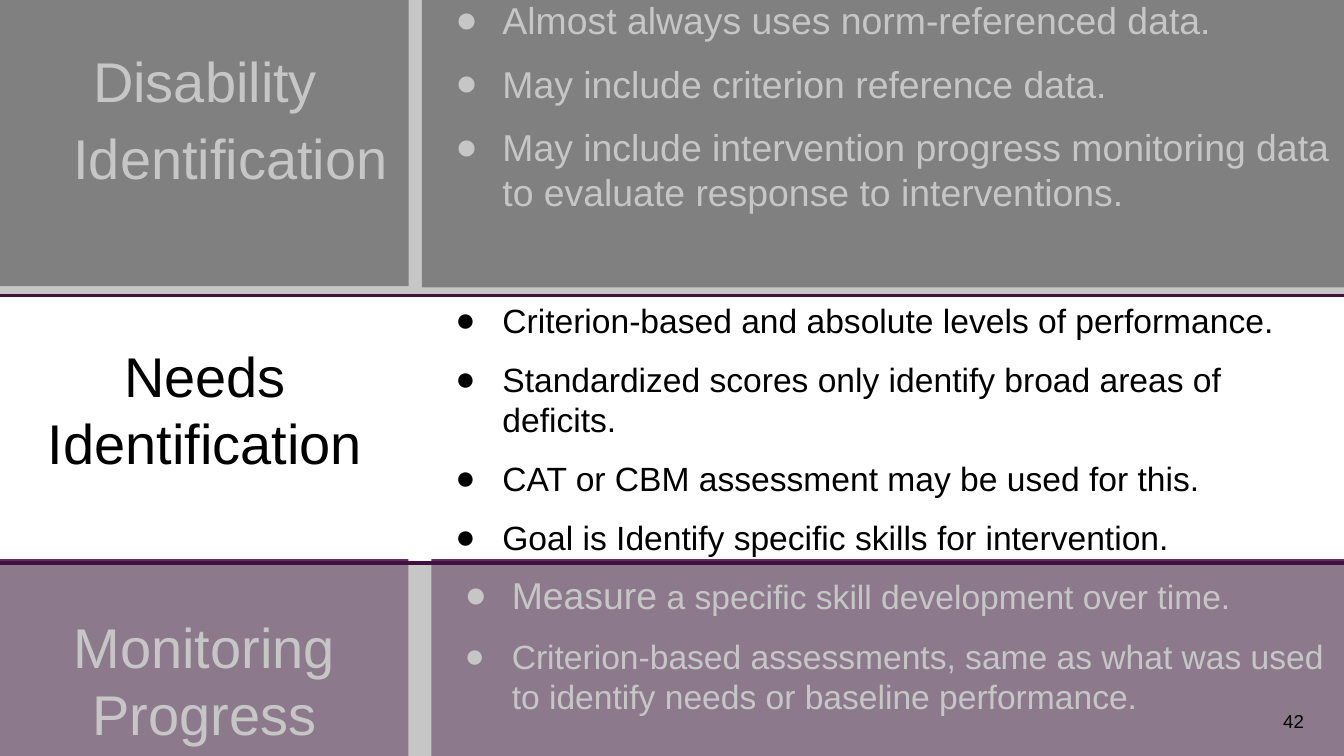
from lxml import etree
from pptx import Presentation
from pptx.dml.color import RGBColor
from pptx.enum import shapes, text
from pptx.oxml.ns import qn
from pptx.util import Inches, Pt

FONT = "Arial"
WHITE, BLACK = "FFFFFF", "000000"
GRAY, PURPLE = "3F3F3F", "632E62"
VEIL, VEIL_EDGE = "A6A6A6", "40113F"


def color(value):
    return RGBColor.from_string(value)


def add_panel(page, place, fill=None, top_inset=0.1, left_inset=0.1):
    """Add a text panel, filled only when a colour is given."""
    box = page.shapes.add_textbox(*map(Inches, place))
    if fill:
        box.fill.solid()
        box.fill.fore_color.rgb = color(fill)
    frame = box.text_frame
    frame.word_wrap = True
    frame.vertical_anchor = text.MSO_ANCHOR.TOP
    frame.margin_left, frame.margin_top = Inches(left_inset), Inches(top_inset)
    frame.margin_right = frame.margin_bottom = Inches(0.1)
    return frame


def add_paragraphs(frame, lines):
    """Yield one paragraph for each line, reusing the first empty one."""
    for number, line in enumerate(lines):
        para = frame.add_paragraph() if number else frame.paragraphs[0]
        para.text = line
        yield para


def set_font(para, size, ink):
    para.font.name = FONT
    para.font.size = Pt(size)
    para.font.color.rgb = color(ink)


def set_indent(para, left, first):
    props = para._p.get_or_add_pPr()
    props.set("marL", str(Inches(left)))
    props.set("indent", str(Inches(first)))
    return props


def add_bullet(para, ink):
    props = set_indent(para, 0.5, -0.35)
    tint = etree.SubElement(props, qn("a:buClr"))
    etree.SubElement(tint, qn("a:srgbClr"), val=ink)
    etree.SubElement(props, qn("a:buFont"), typeface=FONT)
    etree.SubElement(props, qn("a:buChar"), char="●")


def add_heading(frame, lines, ink):
    for para in add_paragraphs(frame, lines):
        para.alignment = text.PP_ALIGN.CENTER
        set_font(para, 30, ink)


def add_bullets(frame, lines, size, ink):
    for number, para in enumerate(add_paragraphs(frame, lines)):
        if number:
            para.space_before = Pt(10)
        add_bullet(para, ink)
        set_font(para, size, ink)


def add_veil(page, place):
    """Add a translucent band that dims the panels under it."""
    veil = page.shapes.add_shape(shapes.MSO_SHAPE.RECTANGLE, *map(Inches, place))
    veil.shadow.inherit = False
    veil.fill.solid()
    veil.fill.fore_color.rgb = color(VEIL)
    tint = veil.fill._xPr.find(qn("a:solidFill"))[0]
    etree.SubElement(tint, qn("a:alpha"), val="63000")
    veil.line.color.rgb = color(VEIL_EDGE)
    veil.line.width = Pt(2)


def add_disability_row(page):
    heading = add_panel(page, (-0.01, -0.13, 3.05, 2.26), GRAY, 0.4, 0)
    add_heading(heading, ["Disability Identification"], WHITE)
    heading.paragraphs[0].line_spacing = 1.15
    set_indent(heading.paragraphs[0], 0.5, -0.38)
    add_bullets(add_panel(page, (3.14, -0.12, 6.87, 2.26), GRAY), [
        "Almost always uses norm-referenced data.",
        "May include criterion reference data.",
        "May include intervention progress monitoring data to evaluate "
        "response to interventions.",
    ], 20, WHITE)


def add_needs_row(page):
    heading = add_panel(page, (0, 2.24, 3.05, 1.82), top_inset=0.3)
    add_heading(heading, ["Needs", "Identification"], BLACK)
    add_bullets(add_panel(page, (3.14, 2.13, 6.87, 1.84)), [
        "Criterion-based and absolute levels of performance.",
        "Standardized scores only identify broad areas of deficits.",
        "CAT or CBM assessment may be used for this.",
        "Goal is Identify specific skills for intervention.",
    ], 18, BLACK)


def add_monitoring_row(page):
    heading = add_panel(page, (0, 4.16, 3.04, 1.59), PURPLE, 0.4)
    add_heading(heading, ["Monitoring", "Progress"], WHITE)
    details = add_panel(page, (3.21, 4.16, 6.87, 1.59), PURPLE)
    add_bullets(details, [
        "Measure",
        "Criterion-based assessments, same as what was used to identify "
        "needs or baseline performance.",
    ], 18, WHITE)
    first = details.paragraphs[0]
    first.runs[0].font.size = Pt(20)
    first.add_run().text = " a specific skill development over time."


def add_page_number(page, number):
    box = page.shapes.add_textbox(*map(Inches, (9.33, 5.23, 0.47, 0.4)))
    box.text_frame.word_wrap = True
    para = box.text_frame.paragraphs[0]
    para.text = number
    para.alignment = text.PP_ALIGN.RIGHT
    set_font(para, 10, BLACK)


def main():
    deck = Presentation()
    deck.slide_width = Inches(10)
    deck.slide_height = deck.slide_width * 9 // 16
    page = deck.slides.add_slide(deck.slide_layouts[6])
    page.background.fill.solid()
    page.background.fill.fore_color.rgb = color(WHITE)
    add_disability_row(page)
    add_needs_row(page)
    add_monitoring_row(page)
    add_veil(page, (-0.37, 4.19, 10.74, 1.59))
    add_veil(page, (-0.3, -0.07, 10.74, 2.27))
    add_page_number(page, "42")
    deck.save("out.pptx")


if __name__ == "__main__":
    main()
